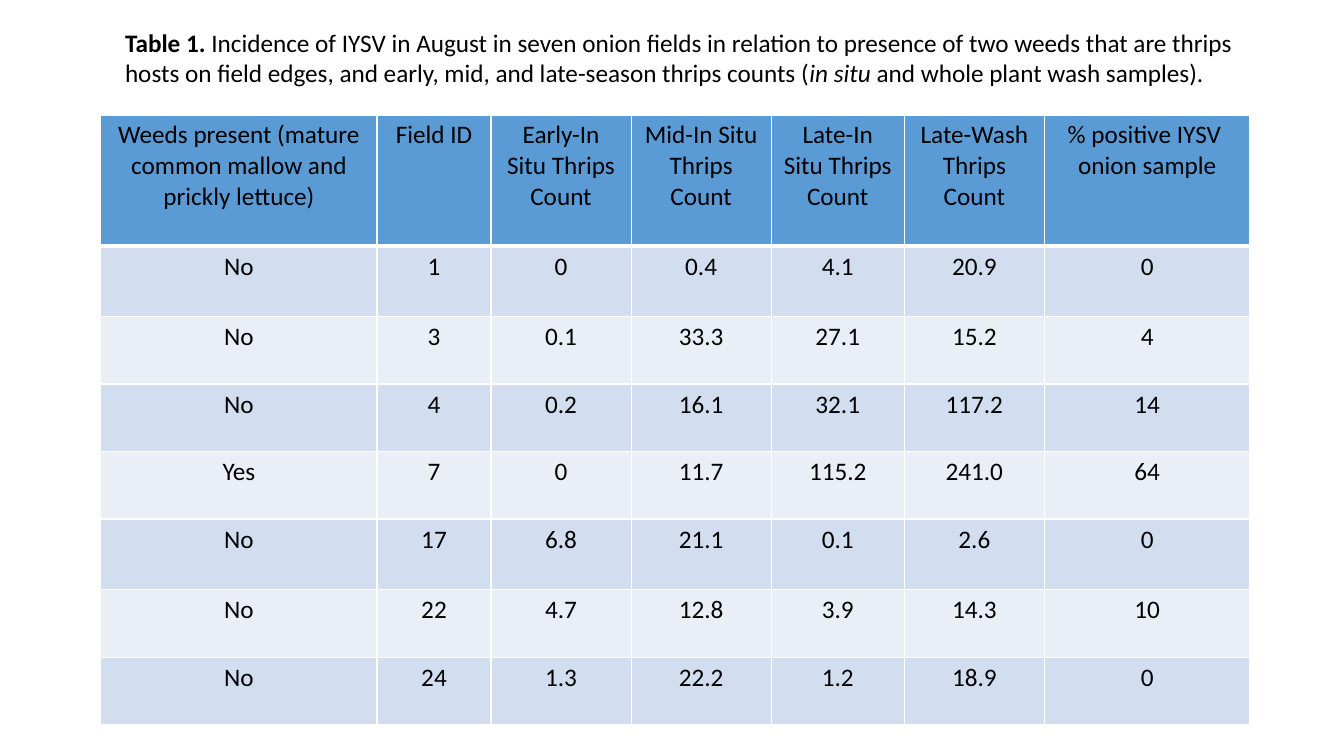
import dataclasses

import pptx
import pptx.dml.color
import pptx.enum.text
import pptx.oxml
import pptx.oxml.ns
import pptx.util

Inches = pptx.util.Inches


@dataclasses.dataclass(frozen=True)
class Theme:
    font: str = "Calibri"
    size: int = 18
    text: str = "000000"
    header: str = "5B9BD5"
    bands: tuple = ("D2DEEF", "EAEFF7")
    border: str = "FFFFFF"
    border_width: int = 1
    header_rule: int = 3


THEME = Theme()

CAPTION = [
    [("Table 1.", "bold"),
     (" Incidence of IYSV in August in seven onion fields in relation to "
      "presence of two weeds that are thrips", "")],
    [("hosts on field edges, and early, mid, and late-season thrips counts (", ""),
     ("in situ ", "italic"),
     ("and whole plant wash samples).", "")],
]

COLUMN_WIDTHS = [2.74, 1.13, 1.39, 1.39, 1.32, 1.39, 2.04]
ROW_HEIGHTS = [1.3, 0.7, 0.67, 0.67, 0.67, 0.7, 0.67, 0.67]
ROWS = [
    ["Weeds present (mature common mallow and prickly lettuce)", "Field ID",
     "Early-In Situ Thrips Count", "Mid-In Situ Thrips Count",
     "Late-In Situ Thrips Count", "Late-Wash Thrips Count",
     "% positive IYSV  onion sample"],
    ["No", "1", "0", "0.4", "4.1", "20.9", "0"],
    ["No", "3", "0.1", "33.3", "27.1", "15.2", "4"],
    ["No", "4", "0.2", "16.1", "32.1", "117.2", "14"],
    ["Yes", "7", "0", "11.7", "115.2", "241.0", "64"],
    ["No", "17", "6.8", "21.1", "0.1", "2.6", "0"],
    ["No", "22", "4.7", "12.8", "3.9", "14.3", "10"],
    ["No", "24", "1.3", "22.2", "1.2", "18.9", "0"],
]


def color(value):
    return pptx.dml.color.RGBColor.from_string(value)


def format_span(span, style=""):
    span.font.name = THEME.font
    span.font.size = pptx.util.Pt(THEME.size)
    span.font.color.rgb = color(THEME.text)
    span.font.bold = style == "bold"
    span.font.italic = style == "italic"


def add_caption(page):
    box = page.shapes.title
    box.left, box.top = Inches(1.14), Inches(0.22)
    box.width, box.height = Inches(11.38), Inches(0.71)
    frame = box.text_frame
    frame.word_wrap = True
    frame.auto_size = pptx.enum.text.MSO_AUTO_SIZE.NONE
    frame.vertical_anchor = pptx.enum.text.MSO_ANCHOR.TOP
    frame.text = "\n".join("".join(text for text, _ in line) for line in CAPTION)
    for para, line in zip(frame.paragraphs, CAPTION):
        para.alignment = pptx.enum.text.PP_ALIGN.LEFT
        para.clear()
        for text, style in line:
            span = para.add_run()
            span.text = text
            format_span(span, style)


def set_borders(cell, top, bottom):
    properties = cell._tc.get_or_add_tcPr()
    widths = {"L": THEME.border_width, "R": THEME.border_width, "T": top, "B": bottom}
    # Borders come before the fill in the cell properties
    for position, (side, width) in enumerate(widths.items()):
        line = pptx.oxml.parse_xml(
            f'<a:ln{side} {pptx.oxml.ns.nsdecls("a")} w="{pptx.util.Pt(width)}">'
            f'<a:solidFill><a:srgbClr val="{THEME.border}"/></a:solidFill>'
            f'</a:ln{side}>')
        properties.insert(position, line)


def fill_cell(cell, text, row):
    cell.text_frame.text = text
    para = cell.text_frame.paragraphs[0]
    para.alignment = pptx.enum.text.PP_ALIGN.CENTER
    format_span(para.runs[0])
    cell.fill.solid()
    fill = THEME.header if row == 0 else THEME.bands[(row - 1) % 2]
    cell.fill.fore_color.rgb = color(fill)
    set_borders(cell,
                top=THEME.header_rule if row == 1 else THEME.border_width,
                bottom=THEME.header_rule if row == 0 else THEME.border_width)


def add_thrips_table(page):
    frame = page.shapes.add_table(
        len(ROWS), len(COLUMN_WIDTHS), Inches(1), Inches(1.14),
        Inches(sum(COLUMN_WIDTHS)), Inches(sum(ROW_HEIGHTS)))
    table = frame.table
    for column, width in zip(table.columns, COLUMN_WIDTHS):
        column.width = Inches(width)
    for row, height in zip(table.rows, ROW_HEIGHTS):
        row.height = Inches(height)
    for row, values in enumerate(ROWS):
        for column, text in enumerate(values):
            fill_cell(table.cell(row, column), text, row)


def main():
    deck = pptx.Presentation()
    deck.slide_width, deck.slide_height = Inches(13.33), Inches(7.5)
    # Title Only layout
    page = deck.slides.add_slide(deck.slide_layouts[5])
    add_thrips_table(page)
    add_caption(page)
    deck.save("out.pptx")


if __name__ == "__main__":
    main()
